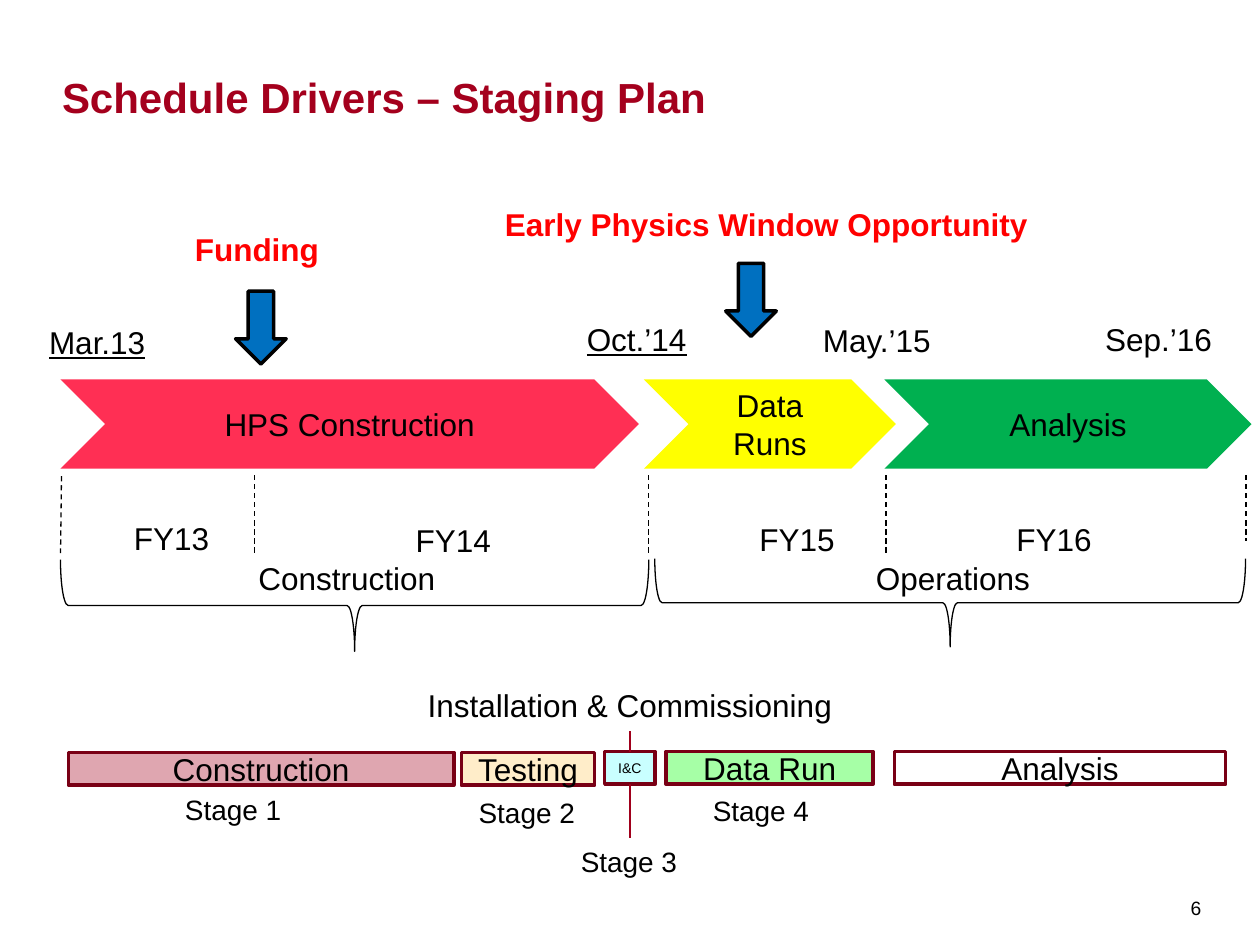
from lxml import etree
from pptx import Presentation
from pptx.dml.color import RGBColor
from pptx.enum.dml import MSO_LINE
from pptx.enum.shapes import MSO_CONNECTOR, MSO_SHAPE
from pptx.enum.text import MSO_ANCHOR, MSO_AUTO_SIZE, PP_ALIGN
from pptx.oxml.ns import qn
from pptx.util import Cm, Pt

CHEVRON, DOWN_ARROW = MSO_SHAPE.CHEVRON, MSO_SHAPE.DOWN_ARROW
BRACE, RECTANGLE = MSO_SHAPE.LEFT_BRACE, MSO_SHAPE.RECTANGLE
STRAIGHT, DASH = MSO_CONNECTOR.STRAIGHT, MSO_LINE.DASH
MIDDLE, BOTTOM = MSO_ANCHOR.MIDDLE, MSO_ANCHOR.BOTTOM
LEFT, CENTER = PP_ALIGN.LEFT, PP_ALIGN.CENTER
FIT = MSO_AUTO_SIZE.SHAPE_TO_FIT_TEXT
TOP_SIDE, BOTTOM_SIDE = 0, 2

BLACK = RGBColor(0x00, 0x00, 0x00)
WHITE = RGBColor(0xFF, 0xFF, 0xFF)
RED = RGBColor(0xFF, 0x00, 0x00)
CRIMSON = RGBColor(0xA4, 0x00, 0x1D)
DARK_RED = RGBColor(0x79, 0x00, 0x15)
LEADER_RED = RGBColor(0xA0, 0x00, 0x1C)
PINK = RGBColor(0xFF, 0x2F, 0x54)
YELLOW = RGBColor(0xFF, 0xFF, 0x00)
GREEN = RGBColor(0x00, 0xB0, 0x50)
BLUE = RGBColor(0x00, 0x70, 0xC0)
AMBER = RGBColor(0xFF, 0xCC, 0x66)
CYAN = RGBColor(0x66, 0xFF, 0xFF)
LIME = RGBColor(0x00, 0xFF, 0x00)

# Content; all lengths in cm
TITLE = "Schedule Drivers – Staging Plan"
PAGE_NUMBER = "6"
PHASES = [  # text, left, width, fill
    ("HPS Construction", 1.22, 11.66, PINK),
    ("Data Runs", 12.98, 5.08, YELLOW),
    ("Analysis", 17.83, 7.4, GREEN),
]
LABEL_GROUPS = [  # font values, wrap, labels (text, left, top, width)
    ({"underline": True}, False, [("Mar.13", 0.74, 6.38, 2.5),
                                  ("Oct.’14", 11.58, 6.32, 2.6)]),
    ({}, False, [("May.’15", 16.34, 6.35, 2.75),
                 ("Sep.’16", 22.03, 6.32, 2.75),
                 ("FY13", 2.45, 10.33, 2.1),
                 ("FY14", 8.13, 10.38, 2.1),
                 ("FY15", 15.06, 10.36, 2.1),
                 ("FY16", 20.24, 10.36, 2.1),
                 ("Construction", 4.96, 11.15, 4.15),
                 ("Operations", 17.41, 11.15, 3.7),
                 ("Installation & Commissioning", 8.37, 13.7, 8.8)]),
    ({"bold": True}, True, [("Early Physics Window Opportunity", 9.93, 4, 11.46),
                            ("Funding", 3.68, 4.52, 3.51)]),
    ({"size": Pt(16)}, False, [("Stage 1", 3.48, 15.85, 2.55),
                               ("Stage 2", 9.4, 15.92, 2.55),
                               ("Stage 3", 11.46, 16.9, 2.55),
                               ("Stage 4", 14.12, 15.88, 2.55)]),
]
EVENT_ARROWS = [(14.63, 5.31), (4.75, 5.87)]  # left, top
YEAR_MARKS = [  # x1, y1, x2, y2
    (1.24, 9.6, 1.22, 11.15),
    (5.13, 9.58, 5.13, 11.15),
    (13.08, 9.58, 13.08, 11.15),
    (17.86, 9.58, 17.86, 11.15),
    (25.12, 9.58, 25.12, 10.9),
]
BRACES = [(1.22, 13.08, 11.28, 1.85), (13.2, 25.11, 11.26, 1.78)]  # x1, x2, top, depth
STAGES = [  # text, left, top, width, fill, text size
    ("Construction", 1.38, 15.17, 7.77, CRIMSON, 18),
    ("Testing", 9.3, 15.17, 2.69, AMBER, 18),
    ("I&C", 12.19, 15.15, 1.02, CYAN, 8),
    ("Data Run", 13.43, 15.15, 4.17, LIME, 18),
    ("Analysis", 18.03, 15.15, 6.68, WHITE, 18),
]
LEADERS = [(TOP_SIDE, 14.73), (BOTTOM_SIDE, 16.89)]  # side of I&C bar, far end y
LEADER_X = 12.7


def write(shape, text, color=BLACK, align=LEFT, **font_values):
    paragraph = shape.text_frame.paragraphs[0]
    paragraph.alignment = align
    run = paragraph.add_run()
    run.text = text
    run.font.color.rgb = color
    values = {"name": "Arial", "size": Pt(18), **font_values}
    for key, value in values.items():
        setattr(run.font, key, value)


def add_figure(preset, left, top, width, height, fill=None, line=None, weight=0.75):
    shape = slide.shapes.add_shape(preset, Cm(left), Cm(top), Cm(width), Cm(height))
    shape.shadow.inherit = False
    if fill is None:
        shape.fill.background()
    else:
        shape.fill.solid()
        shape.fill.fore_color.rgb = fill
    if line is None:
        shape.line.fill.background()
    else:
        shape.line.color.rgb = line
        shape.line.width = Pt(weight)
    shape.text_frame.vertical_anchor = MIDDLE
    return shape


def add_line(x1, y1, x2, y2, color):
    line = slide.shapes.add_connector(STRAIGHT, Cm(x1), Cm(y1), Cm(x2), Cm(y2))
    line.line.color.rgb = color
    line.line.width = Pt(0.75)
    etree.SubElement(line._element.spPr, qn("a:effectLst"))
    return line


def set_opacity(shape, percent):
    color = shape._element.spPr.find(qn("a:solidFill"))[0]
    etree.SubElement(color, qn("a:alpha"), val=str(percent * 1000))


prs = Presentation()
prs.slide_width, prs.slide_height = Cm(25.4), Cm(19.05)
slide = prs.slides.add_slide(prs.slide_layouts[5])

# Title and page number
title = slide.shapes.title
title.left, title.top, title.width, title.height = Cm(1.25), Cm(0.37), Cm(22.5), Cm(2.08)
frame = title.text_frame
for side in ("left", "top", "right", "bottom"):
    setattr(frame, f"margin_{side}", 0)
frame.vertical_anchor = BOTTOM
write(title, TITLE, CRIMSON, size=Pt(24), bold=True)

page = slide.shapes.add_textbox(Cm(23.8), Cm(17.56), Cm(0.89), Cm(1.5))
page.text_frame.margin_left = page.text_frame.margin_right = Cm(0.2)
page.text_frame.vertical_anchor = MIDDLE
write(page, PAGE_NUMBER, size=Pt(11))

# Phase chevrons
for text, left, width, fill in PHASES:
    phase = add_figure(CHEVRON, left, 7.65, width, 1.8, fill)
    write(phase, text, align=CENTER)

# Event arrows
for left, top in EVENT_ARROWS:
    add_figure(DOWN_ARROW, left, top, 1.02, 1.47, BLUE, BLACK, 2)

# Fiscal year marks
for mark in YEAR_MARKS:
    add_line(*mark, BLACK).line.dash_style = DASH

# Braces: drawn upright around their centre, then turned
for x1, x2, top, depth in BRACES:
    span = x2 - x1
    brace = add_figure(BRACE, (x1 + x2 - depth) / 2, top + (depth - span) / 2,
                       depth, span, line=BLACK)
    brace.rotation = 270

# Stage bars
bars = {}
for text, left, top, width, fill, size in STAGES:
    bar = add_figure(RECTANGLE, left, top, width, 0.66, fill, DARK_RED, 2)
    set_opacity(bar, 35)
    write(bar, text, align=CENTER, size=Pt(size))
    bars[text] = bar

# Leaders from the I&C bar
for side, end_y in LEADERS:
    leader = add_line(LEADER_X, 15.15, LEADER_X, end_y, LEADER_RED)
    leader.begin_connect(bars["I&C"], side)

# Labels
for font_values, wrap, labels in LABEL_GROUPS:
    color = RED if font_values.get("bold") else BLACK
    for text, left, top, width in labels:
        label = slide.shapes.add_textbox(Cm(left), Cm(top), Cm(width), Cm(1.02))
        label.text_frame.word_wrap = wrap
        label.text_frame.auto_size = FIT
        write(label, text, color, **font_values)

prs.save("out.pptx")
